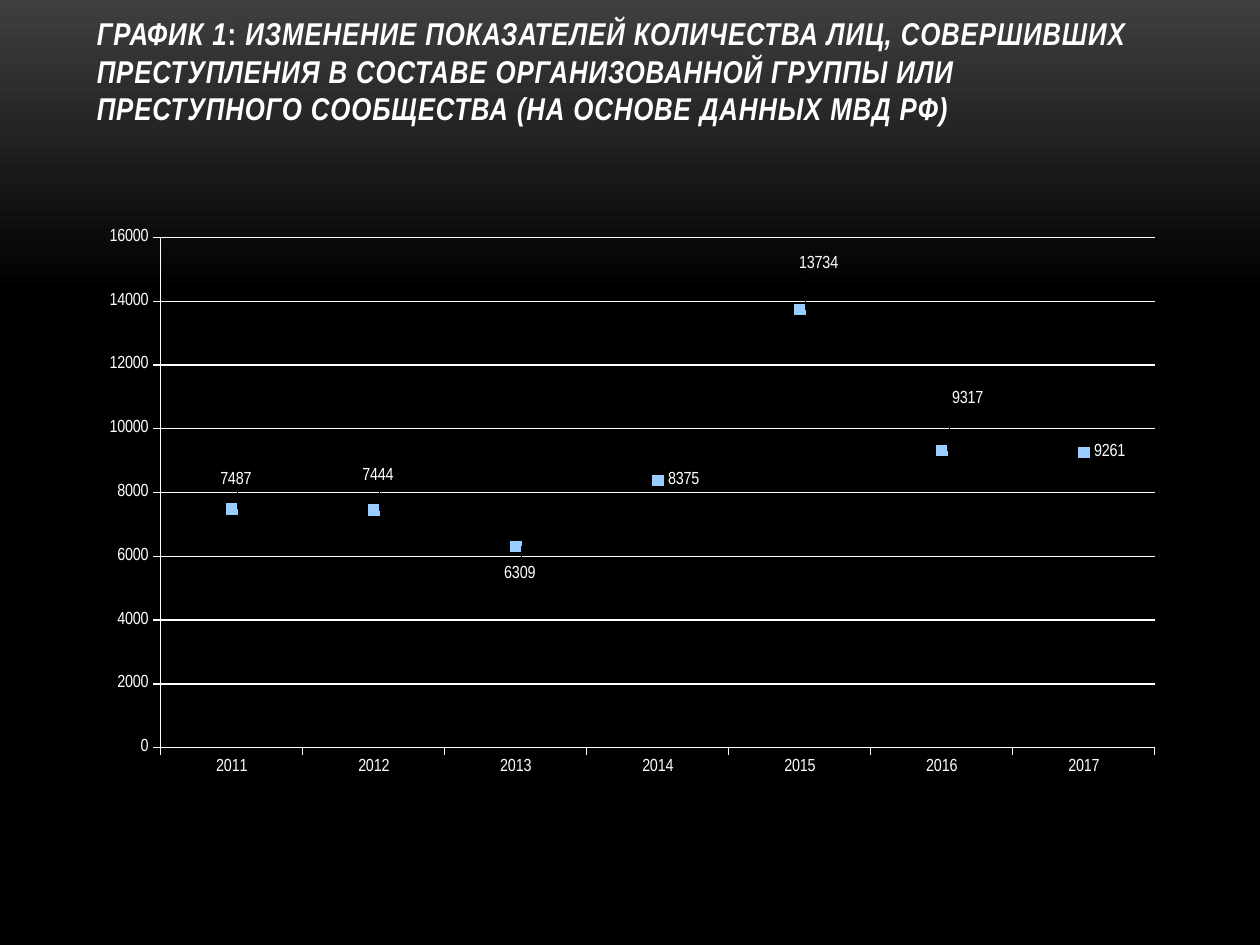
from typing import NamedTuple

from lxml import etree
from pptx import Presentation
from pptx.chart.data import CategoryChartData
from pptx.dml.color import RGBColor
from pptx.enum.chart import XL_CHART_TYPE, XL_LABEL_POSITION, XL_MARKER_STYLE, XL_TICK_MARK
from pptx.enum.text import MSO_ANCHOR
from pptx.oxml.ns import qn
from pptx.util import Inches, Pt

LINE_MARKERS = XL_CHART_TYPE.LINE_MARKERS
RIGHT = XL_LABEL_POSITION.RIGHT
SQUARE = XL_MARKER_STYLE.SQUARE
OUTSIDE = XL_TICK_MARK.OUTSIDE
BOTTOM = MSO_ANCHOR.BOTTOM

FONT = "Arial Narrow"
WHITE, BLACK, GREY, MARKER_BLUE = "FFFFFF", "000000", "3F3F3F", "99CCFF"


class TitlePart(NamedTuple):
    text: str
    italic: bool


class YearCount(NamedTuple):
    year: str
    persons: int
    label_shift: tuple[float, float] | None = None


TITLE = [
    TitlePart("ГРАФИК 1", True),
    TitlePart(": ", False),
    TitlePart("ИЗМЕНЕНИЕ ПОКАЗАТЕЛЕЙ КОЛИЧЕСТВА ЛИЦ, СОВЕРШИВШИХ ПРЕСТУПЛЕНИЯ "
              "В СОСТАВЕ ОРГАНИЗОВАННОЙ ГРУППЫ ИЛИ ПРЕСТУПНОГО СООБЩЕСТВА "
              "(НА ОСНОВЕ ДАННЫХ МВД РФ)", True),
]
COUNTS = [
    YearCount("2011", 7487, (-0.02, -0.05)),
    YearCount("2012", 7444, (-0.02, -0.06)),
    YearCount("2013", 6309, (-0.02, 0.05)),
    YearCount("2014", 8375),
    YearCount("2015", 13734, (-0.01, -0.08)),
    YearCount("2016", 9317, (0, -0.09)),
    YearCount("2017", 9261),
]


def color(hex_value: str) -> RGBColor:
    return RGBColor.from_string(hex_value)


def manual_layout(**values: float | str):
    """Build a c:layout element from the names and values of its parts."""
    layout = etree.Element(qn("c:layout"))
    manual = etree.SubElement(layout, qn("c:manualLayout"))
    for name, value in values.items():
        etree.SubElement(manual, qn(f"c:{name}")).set("val", str(value))
    return layout


def paint_background(slide) -> None:
    fill = slide.background.fill
    fill.gradient()
    fill.gradient_angle = 270
    for stop, position, shade in zip(fill.gradient_stops, (0, 0.31), (GREY, BLACK)):
        stop.position = position
        stop.color.rgb = color(shade)


def add_title(slide) -> None:
    frame = slide.shapes.add_textbox(
        Inches(0.67), Inches(0.3), Inches(8.67), Inches(1.25)).text_frame
    frame.word_wrap = True
    frame.vertical_anchor = BOTTOM
    frame.margin_top = 0
    frame.margin_bottom = Inches(0.54)
    paragraph = frame.paragraphs[0]
    for part in TITLE:
        run = paragraph.add_run()
        run.text = part.text
        font = run.font
        font.name, font.size = FONT, Pt(18)
        font.bold, font.italic = True, part.italic
        font.color.rgb = color(WHITE)
        run._r.get_or_add_rPr().set("spc", "50")


def style_axis(axis) -> None:
    axis.major_tick_mark = OUTSIDE
    axis.format.line.color.rgb = color(WHITE)
    axis.format.line.width = Pt(0.75)


def style_series(series) -> None:
    series.smooth = False
    series.format.line.fill.background()
    marker = series.marker
    marker.style, marker.size = SQUARE, 6
    marker.format.fill.solid()
    marker.format.fill.fore_color.rgb = color(MARKER_BLUE)
    marker.format.line.fill.background()
    series.data_labels.show_value = True
    series.data_labels.position = RIGHT


def shift_labels(series) -> None:
    for index, count in enumerate(COUNTS):
        if count.label_shift:
            series.points[index].data_label.position = RIGHT
    for label in series._element.iter(qn("c:dLbl")):
        index = label.find(qn("c:idx"))
        x, y = COUNTS[int(index.get("val"))].label_shift
        index.addnext(manual_layout(x=x, y=y))


def add_counts_chart(slide) -> None:
    data = CategoryChartData()
    data.categories = [count.year for count in COUNTS]
    data.add_series("Series 1", [count.persons for count in COUNTS])
    chart = slide.shapes.add_chart(
        LINE_MARKERS, Inches(0.67), Inches(1.75), Inches(8.67), Inches(4.5), data).chart
    chart.has_legend = False
    chart.has_title = False
    chart.font.name, chart.font.size = FONT, Pt(10)
    chart.font.color.rgb = color(WHITE)

    style_axis(chart.category_axis)
    values = chart.value_axis
    style_axis(values)
    values.minimum_scale, values.maximum_scale, values.major_unit = 0, 16000, 2000
    values.has_major_gridlines = True
    values.major_gridlines.format.line.color.rgb = color(WHITE)
    values.major_gridlines.format.line.width = Pt(0.75)

    plot = chart.plots[0]
    plot.vary_by_categories = False
    style_series(plot.series[0])
    shift_labels(plot.series[0])

    plot_area = chart._chartSpace.find(f".//{qn('c:plotArea')}")
    for layout in plot_area.findall(qn("c:layout")):
        plot_area.remove(layout)
    plot_area.insert(0, manual_layout(
        layoutTarget="inner", xMode="edge", yMode="edge", x=0.07, y=0.03, w=0.91, h=0.9))


def main() -> None:
    presentation = Presentation()
    presentation.slide_width, presentation.slide_height = Inches(10), Inches(7.5)
    slide = presentation.slides.add_slide(presentation.slide_layouts[6])
    paint_background(slide)
    add_title(slide)
    add_counts_chart(slide)
    presentation.save("out.pptx")


if __name__ == "__main__":
    main()
